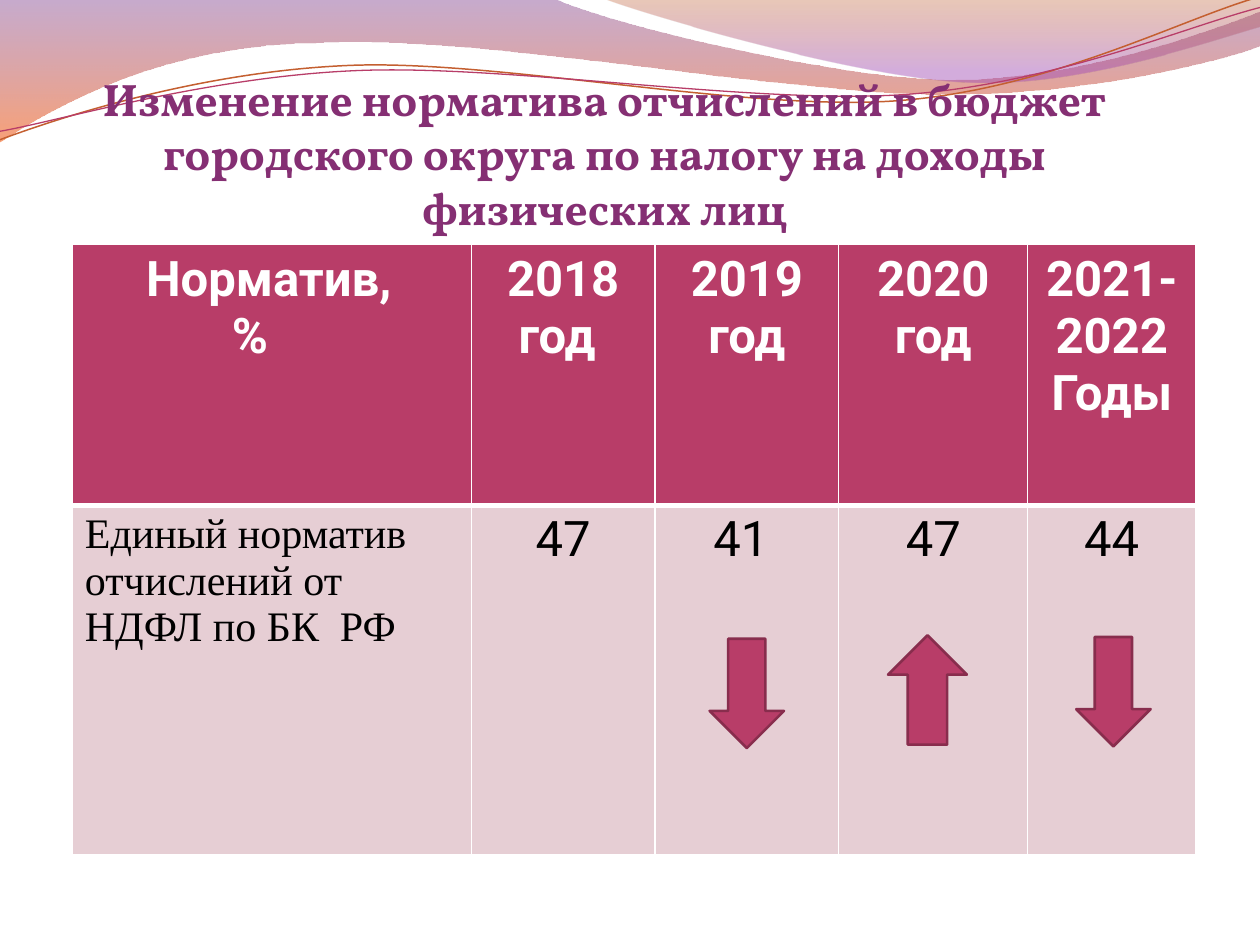
from lxml import etree
from pptx import Presentation
from pptx.dml.color import RGBColor
from pptx.enum.shapes import MSO_SHAPE
from pptx.enum.text import MSO_ANCHOR, PP_ALIGN
from pptx.oxml.ns import qn
from pptx.util import Pt

DOWN, UP = MSO_SHAPE.DOWN_ARROW, MSO_SHAPE.UP_ARROW
CENTER, LEFT = PP_ALIGN.CENTER, PP_ALIGN.LEFT
BOTTOM = MSO_ANCHOR.BOTTOM

RASPBERRY, DARK_RASPBERRY, PALE_PINK = "B83D68", "882D4D", "E6CED4"
WHITE, BLACK, PURPLE = "FFFFFF", "000000", "852F73"

TITLE_FONT = {"name": "Vollkorn", "size": Pt(26), "bold": True}
HEADER_FONT = {"name": "Roboto", "size": Pt(28), "bold": True}
VALUE_FONT = {"name": "Roboto", "size": Pt(28), "bold": False}
LABEL_FONT = {"name": "Times New Roman", "size": Pt(24), "bold": False}

# A wave is a start point and segments: one point is a line, three are a Bézier curve.
BAND = [(0, -0.7), [(316.8, -0.7)],
        [(342.7, 12.2), (478.1, 45.4), (545.8, 45.4)],
        [(614.2, 45.4), (689.8, 18.7), (720, 6.5)], [(720.7, 25.9)],
        [(707.8, 31.7), (626.4, 54.7), (537.1, 54)],
        [(447.8, 54), (275, 20.2), (185, 24.5)],
        [(92.9, 25.2), (33.1, 59.8), (-0.7, 81.4)], [(0, -0.7)]]
CORNER = [(344.9, -0.7),
          [(366.5, 7.9), (491, 44.6), (553.7, 46.8)],
          [(616.3, 49.7), (691.9, 23), (720, 15.1)], [(720, 0)], [(344.9, -0.7)]]
ORANGE_LINE = [(-1.4, 62.9),
               [(33.8, 51.7), (114.1, 29.4), (199.8, 29.9)],
               [(284.9, 30.3), (425.8, 67.3), (512.4, 64.8)],
               [(599, 62.4), (676.5, 25.7), (720.2, 15.5)]]
RASPBERRY_LINE = [(-1.1, 58),
                  [(32.9, 53.8), (118.3, 32.5), (204.1, 33)],
                  [(290.6, 33.4), (428.9, 63.1), (515.5, 61.4)],
                  [(601.3, 59.6), (678.5, 30.1), (721.4, 21.3)]]
LINE_TILT = 357.3

COLUMN_WIDTHS = [228, 105, 105, 108, 96]
ROW_HEIGHTS = [149, 199.5]
YEARS = [["2018 год "], ["2019 год"], ["2020 год"], ["2021-2022", "Годы"]]
RATES = ["47", "41 ", "47", "44"]
ARROWS = [(DOWN, 615, 364, 42.5), (UP, 507.5, 363, 45), (DOWN, 405.5, 365, 42.5)]


def rgb(color):
    return RGBColor.from_string(color)


def add_wave(slide, wave, closed):
    """Outline a wave through all its points, then join each curve's three into a Bézier."""
    (start_x, start_y), *segments = wave
    builder = slide.shapes.build_freeform(Pt(start_x), Pt(start_y))
    points = [(Pt(x), Pt(y)) for segment in segments for x, y in segment]
    builder.add_line_segments(points, close=closed)
    shape = builder.convert_to_shape()
    shape.shadow.inherit = False
    steps = iter(list(shape._element.spPr.iter(qn("a:lnTo"))))
    for segment in segments:
        parts = [next(steps) for _ in segment]
        if len(parts) == 3:
            curve = etree.Element(qn("a:cubicBezTo"))
            parts[0].addprevious(curve)
            for part in parts:
                curve.append(part[0])
                part.getparent().remove(part)
    return shape


def add_wave_area(slide, wave, stops):
    """Add a wave filled from top to bottom by (position, colour, opacity %) stops."""
    area = add_wave(slide, wave, True)
    area.line.fill.background()
    area.fill.gradient()
    area.fill.gradient_angle = 270
    for stop, (position, color, _) in zip(area.fill.gradient_stops, stops):
        stop.position = position
        stop.color.rgb = rgb(color)
    for color_xml, (_, _, opacity) in zip(area._element.spPr.iter(qn("a:srgbClr")), stops):
        etree.SubElement(color_xml, qn("a:alpha"), val=str(opacity * 1000))


def set_line(shape, color, width):
    shape.line.color.rgb = rgb(color)
    shape.line.width = Pt(width)


def add_wave_line(slide, wave, color, width):
    curve = add_wave(slide, wave, False)
    curve.rotation = LINE_TILT
    curve.fill.background()
    set_line(curve, color, width)


def write(paragraph, text, font, color, align, indent=0):
    paragraph.alignment = align
    if indent:
        paragraph._p.get_or_add_pPr().set("marL", str(Pt(indent)))
    run = paragraph.add_run()
    run.text = text
    for name, value in font.items():
        setattr(run.font, name, value)
    run.font.color.rgb = rgb(color)


def add_title(slide, text):
    frame = slide.shapes.add_textbox(Pt(39.5), Pt(32.5), Pt(612.5), Pt(101.5)).text_frame
    layout = {"word_wrap": True, "vertical_anchor": BOTTOM, "margin_left": 0,
              "margin_top": Pt(3.6), "margin_right": 0, "margin_bottom": 0}
    for name, value in layout.items():
        setattr(frame, name, value)
    write(frame.paragraphs[0], text, TITLE_FONT, PURPLE, CENTER)


def set_borders(cell, color, widths):
    properties = cell._tc.get_or_add_tcPr()
    for side, width in widths.items():
        border = etree.SubElement(properties, qn(f"a:ln{side}"), w=str(Pt(width)))
        fill = etree.SubElement(border, qn("a:solidFill"))
        etree.SubElement(fill, qn("a:srgbClr"), val=color)


def fill_cell(cell, lines, font, color, background, align, indents=(0, 0), bottom=1, top=1):
    set_borders(cell, WHITE, {"L": 1, "R": 1, "T": top, "B": bottom})
    cell.fill.solid()
    cell.fill.fore_color.rgb = rgb(background)
    frame = cell.text_frame
    for number, (line, indent) in enumerate(zip(lines, indents)):
        paragraph = frame.add_paragraph() if number else frame.paragraphs[0]
        write(paragraph, line, font, color, align, indent)


def add_rate_table(slide):
    table = slide.shapes.add_table(
        len(ROW_HEIGHTS), len(COLUMN_WIDTHS), Pt(41.3), Pt(139.7),
        Pt(sum(COLUMN_WIDTHS)), Pt(sum(ROW_HEIGHTS))).table
    table.horz_banding = False
    for column, width in zip(table.columns, COLUMN_WIDTHS):
        column.width = Pt(width)
    for row, height in zip(table.rows, ROW_HEIGHTS):
        row.height = Pt(height)

    header = (HEADER_FONT, WHITE, RASPBERRY)
    fill_cell(table.cell(0, 0), ["Норматив,", "%"], *header, LEFT, indents=(35, 84), bottom=3)
    fill_cell(table.cell(1, 0), ["Единый норматив отчислений от НДФЛ по БК  РФ"],
              LABEL_FONT, BLACK, PALE_PINK, LEFT, top=3)
    for column, (year, rate) in enumerate(zip(YEARS, RATES), start=1):
        fill_cell(table.cell(0, column), year, *header, CENTER, bottom=3)
        fill_cell(table.cell(1, column), [rate], VALUE_FONT, BLACK, PALE_PINK, CENTER, top=3)


def add_trend_arrow(slide, direction, left, top, width):
    arrow = slide.shapes.add_shape(direction, Pt(left), Pt(top), Pt(width), Pt(62.5))
    arrow.shadow.inherit = False
    arrow.fill.solid()
    arrow.fill.fore_color.rgb = rgb(RASPBERRY)
    set_line(arrow, DARK_RASPBERRY, 1.5)


def main():
    deck = Presentation()
    deck.slide_width, deck.slide_height = Pt(720), Pt(540)
    slide = deck.slides.add_slide(deck.slide_layouts[6])
    add_wave_area(slide, BAND, [(0, "834591", 45), (1, "F35307", 55)])
    add_wave_area(slide, CORNER, [(0, "B74915", 30), (0.8, "A14BB4", 45)])
    add_wave_line(slide, ORANGE_LINE, "C45F30", 0.85)
    add_wave_line(slide, RASPBERRY_LINE, RASPBERRY, 0.75)
    add_title(slide, "Изменение норматива отчислений в бюджет городского округа "
                     "по налогу на доходы физических лиц")
    add_rate_table(slide)
    for arrow in ARROWS:
        add_trend_arrow(slide, *arrow)
    deck.save("out.pptx")


if __name__ == "__main__":
    main()
